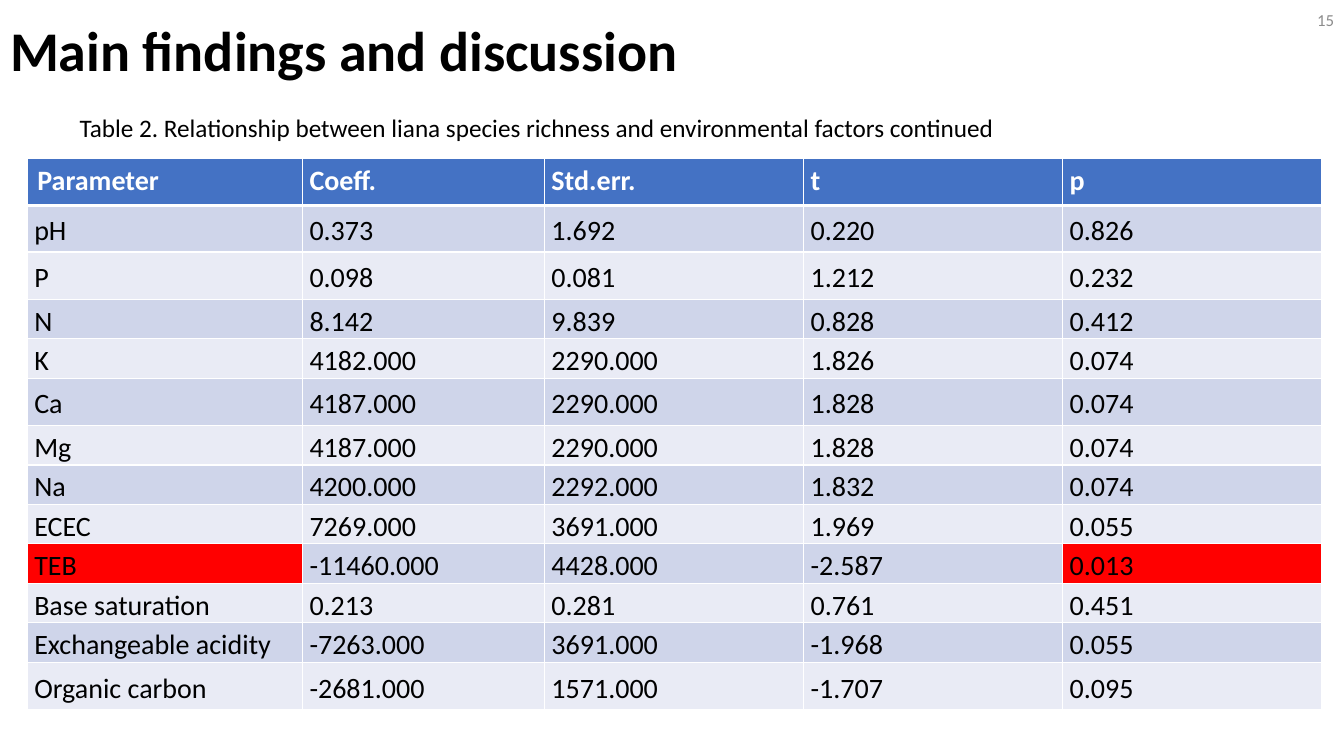
"""Build the slide on liana species richness and environmental factors."""
from dataclasses import dataclass

from lxml.etree import SubElement as Sub
from pptx import Presentation
from pptx.dml.color import RGBColor as Rgb
from pptx.enum.text import MSO_ANCHOR as Anchor, MSO_AUTO_SIZE as Fit, PP_ALIGN as Align
from pptx.oxml.ns import qn
from pptx.util import Inches, Pt

TITLE = "Main findings and discussion"
LABEL = "Table 2. Relationship between liana species richness and environmental factors continued"
PAGE = "15"
HEAD = ("Parameter", "Coeff.", "Std.err.", "t", "p")
ROWS = [
    ("pH", "0.373", "1.692", "0.220", "0.826"),
    ("P", "0.098", "0.081", "1.212", "0.232"),
    ("N", "8.142", "9.839", "0.828", "0.412"),
    ("K", "4182.000", "2290.000", "1.826", "0.074"),
    ("Ca", "4187.000", "2290.000", "1.828", "0.074"),
    ("Mg", "4187.000", "2290.000", "1.828", "0.074"),
    ("Na", "4200.000", "2292.000", "1.832", "0.074"),
    ("ECEC", "7269.000", "3691.000", "1.969", "0.055"),
    ("TEB", "-11460.000", "4428.000", "-2.587", "0.013"),
    ("Base saturation", "0.213", "0.281", "0.761", "0.451"),
    ("Exchangeable acidity", "-7263.000", "3691.000", "-1.968", "0.055"),
    ("Organic carbon", "-2681.000", "1571.000", "-1.707", "0.095"),
]
ALERT = {("TEB", 0), ("TEB", 4)}
WIDTHS = (2.73, 2.4, 2.57, 2.57, 2.57)
TALL = {"Parameter": 0.47, "pH": 0.46, "P": 0.47, "Ca": 0.47, "Organic carbon": 0.47}
LOW = 0.39


@dataclass(frozen=True)
class Theme:
    """Hold the colours and type sizes."""
    font: str = "Calibri"
    ink: str = "000000"
    white: str = "FFFFFF"
    grey: str = "8C8C8C"
    head: str = "4472C4"
    bands: tuple = ("E9EBF5", "CFD5EA")
    alert: str = "FF0000"
    title: int = 40
    cell: int = 20
    label: int = 18
    page: int = 12


T = Theme()


def write(para, text, size, color, bold=False):
    """Add one styled run."""
    run = para.add_run()
    run.text = text
    font = run.font
    font.name, font.size, font.bold = T.font, Pt(size), bold
    font.color.rgb = Rgb.from_string(color)


def edge(cell, side, width):
    """Draw one white cell border."""
    line = Sub(cell._tc.get_or_add_tcPr(), qn(f"a:ln{side}"), w=str(Pt(width)))
    fill = Sub(line, qn("a:solidFill"))
    Sub(fill, qn("a:srgbClr"), val=T.white)


def fill_cell(cell, text, row, col, name):
    """Style one table cell and write its text."""
    top = row == 0
    for side in "LRTB":
        thick = (row, side) in ((0, "B"), (1, "T"))
        edge(cell, side, 3 if thick else 1)
    color = T.head if top else T.alert if (name, col) in ALERT else T.bands[row % 2]
    cell.fill.solid()
    cell.fill.fore_color.rgb = Rgb.from_string(color)
    cell.vertical_anchor = Anchor.TOP if top else Anchor.MIDDLE
    para = cell.text_frame.paragraphs[0]
    if row or col:
        cell.margin_left = cell.margin_right = Inches(0.07)
        cell.margin_top = cell.margin_bottom = 0
        para.line_spacing, para.space_after = 1.15, Pt(10)
    write(para, text, T.cell, T.white if top else T.ink, top)


def add_grid(slide):
    """Add the table of coefficients."""
    data = [HEAD, *ROWS]
    highs = [TALL.get(row[0], LOW) for row in data]
    frame = slide.shapes.add_table(len(data), len(HEAD), Inches(0.27), Inches(1.57),
                                   Inches(sum(WIDTHS)), Inches(sum(highs)))
    grid = frame.table
    for col, width in zip(grid.columns, WIDTHS):
        col.width = Inches(width)
    for r, (row, high) in enumerate(zip(data, highs)):
        grid.rows[r].height = Inches(high)
        for c, text in enumerate(row):
            fill_cell(grid.cell(r, c), text, r, c, row[0])


def add_text(slide, box, text, size, color, wrap=True):
    """Add a text box and return its frame."""
    frame = slide.shapes.add_textbox(*map(Inches, box)).text_frame
    frame.word_wrap = wrap
    write(frame.paragraphs[0], text, size, color)
    return frame


def main():
    """Build and save the slide."""
    deck = Presentation()
    deck.slide_width, deck.slide_height = Inches(13.33), Inches(7.5)
    slide = deck.slides.add_slide(deck.slide_layouts[5])

    title = slide.shapes.title
    title.left, title.top, title.width, title.height = map(Inches, (0, -0.2, 12.83, 1.45))
    frame = title.text_frame
    frame.auto_size, frame.vertical_anchor = Fit.NONE, Anchor.MIDDLE
    para = frame.paragraphs[0]
    para.alignment, para.line_spacing = Align.LEFT, 0.9
    write(para, TITLE, T.title, T.ink, True)

    add_grid(slide)
    page = add_text(slide, (10.33, 0, 3, 0.4), PAGE, T.page, T.grey)
    page.vertical_anchor = Anchor.MIDDLE
    page.paragraphs[0].alignment = Align.RIGHT
    label = add_text(slide, (0.69, 1.07, 9.32, 0.4), LABEL, T.label, T.ink, False)
    label.auto_size = Fit.SHAPE_TO_FIT_TEXT
    deck.save("out.pptx")


if __name__ == "__main__":
    main()
